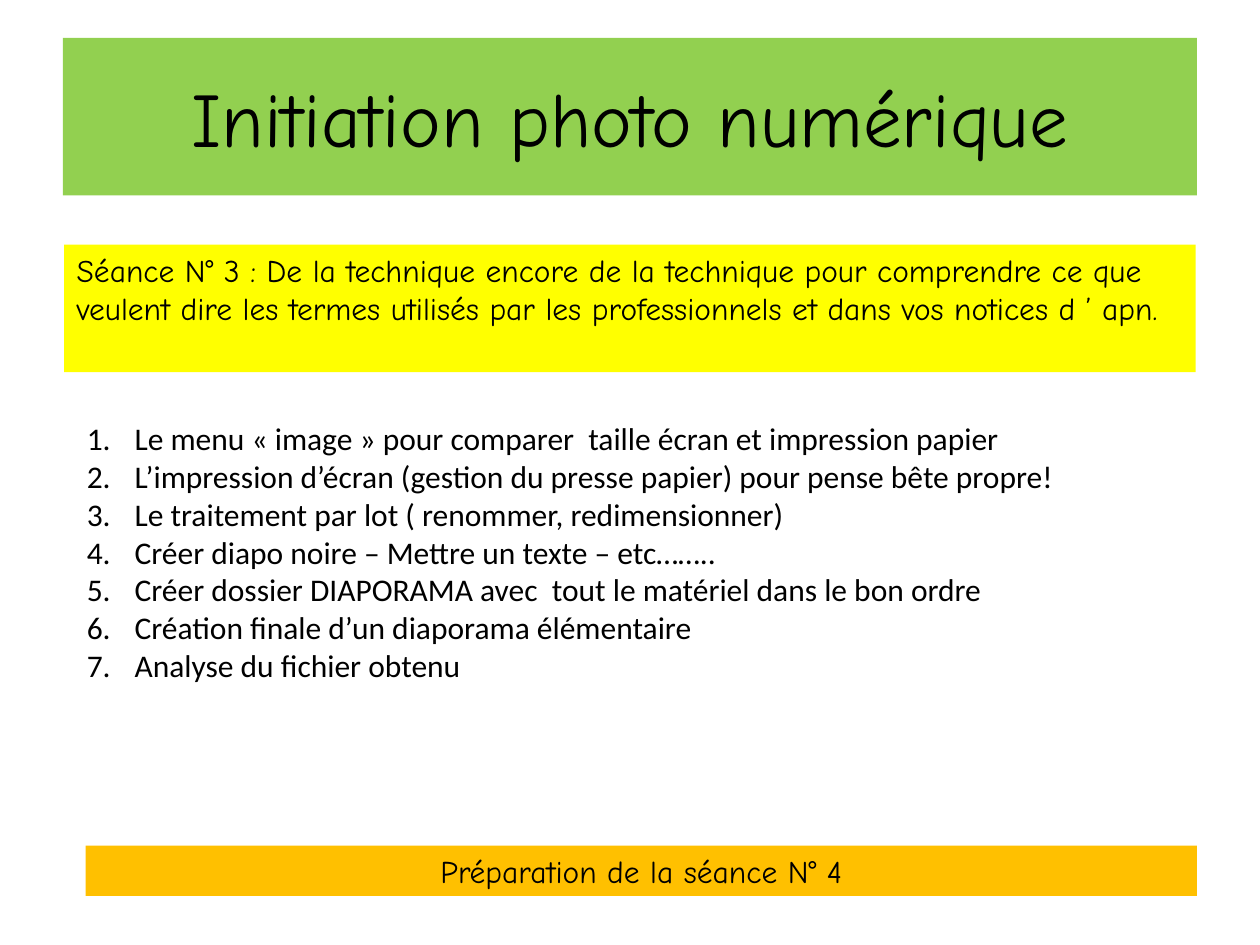
from pptx import Presentation
from pptx.dml.color import RGBColor
from pptx.enum.text import MSO_ANCHOR as Anchor, PP_ALIGN as Align
from pptx.oxml.xmlchemy import OxmlElement
from pptx.util import Emu, Inches, Pt

COLORS = {"title": "92D050", "session": "FFFF00", "next": "FFC000", "text": "000000"}

prs = Presentation()
prs.slide_width, prs.slide_height = Inches(10), Inches(7.5)
W, H = prs.slide_width, prs.slide_height
slide = prs.slides.add_slide(prs.slide_layouts[6])


def add_text(box, lines, size=18, font="Comic Neue", align=Align.LEFT,
             anchor=Anchor.TOP, fill=None):
    """Add a text block; box holds left, top, width, height as slide shares."""
    left, top, width, height = box
    block = slide.shapes.add_textbox(Emu(int(left * W)), Emu(int(top * H)),
                                     Emu(int(width * W)), Emu(int(height * H)))
    if fill:
        block.fill.solid()
        block.fill.fore_color.rgb = RGBColor.from_string(COLORS[fill])
    frame = block.text_frame
    frame.word_wrap = True
    frame.vertical_anchor = anchor
    frame.text = "\n".join(lines)
    for paragraph in frame.paragraphs:
        paragraph.alignment = align
        for run in paragraph.runs:
            run.font.size = Pt(size)
            run.font.name = font
            run.font.color.rgb = RGBColor.from_string(COLORS["text"])
    return frame


add_text((0.05, 0.04, 0.9, 1 / 6), ["Initiation photo numérique"], size=44,
         align=Align.CENTER, anchor=Anchor.MIDDLE, fill="title")

add_text((0.051, 0.259, 0.898, 0.135),
         ["Séance N° 3 : De la technique encore de la technique pour comprendre ce que "
          "veulent dire les termes utilisés par les professionnels et dans vos notices "
          "d ’ apn."], fill="session")

steps = [
    "Le menu « image » pour comparer  taille écran et impression papier",
    "L’impression d’écran (gestion du presse papier) pour pense bête propre!",
    "Le traitement par lot ( renommer, redimensionner)",
    "Créer diapo noire – Mettre un texte – etc……..",
    "Créer dossier DIAPORAMA avec  tout le matériel dans le bon ordre",
    "Création finale d’un diaporama élémentaire",
    "Analyse du fichier obtenu",
]
program = add_text((0.059, 0.437, 0.882, 0.377), steps, font="Calibri")
indent = Inches(0.38)
for step in program.paragraphs:
    properties = step._p.get_or_add_pPr()
    properties.set("marL", str(indent))
    properties.set("indent", str(-indent))
    numbering = OxmlElement("a:buAutoNum")
    numbering.set("type", "arabicPeriod")
    properties.append(numbering)

add_text((0.068, 0.895, 0.882, 0.053), ["Préparation de la séance N° 4"],
         align=Align.CENTER, fill="next")

prs.save("out.pptx")
